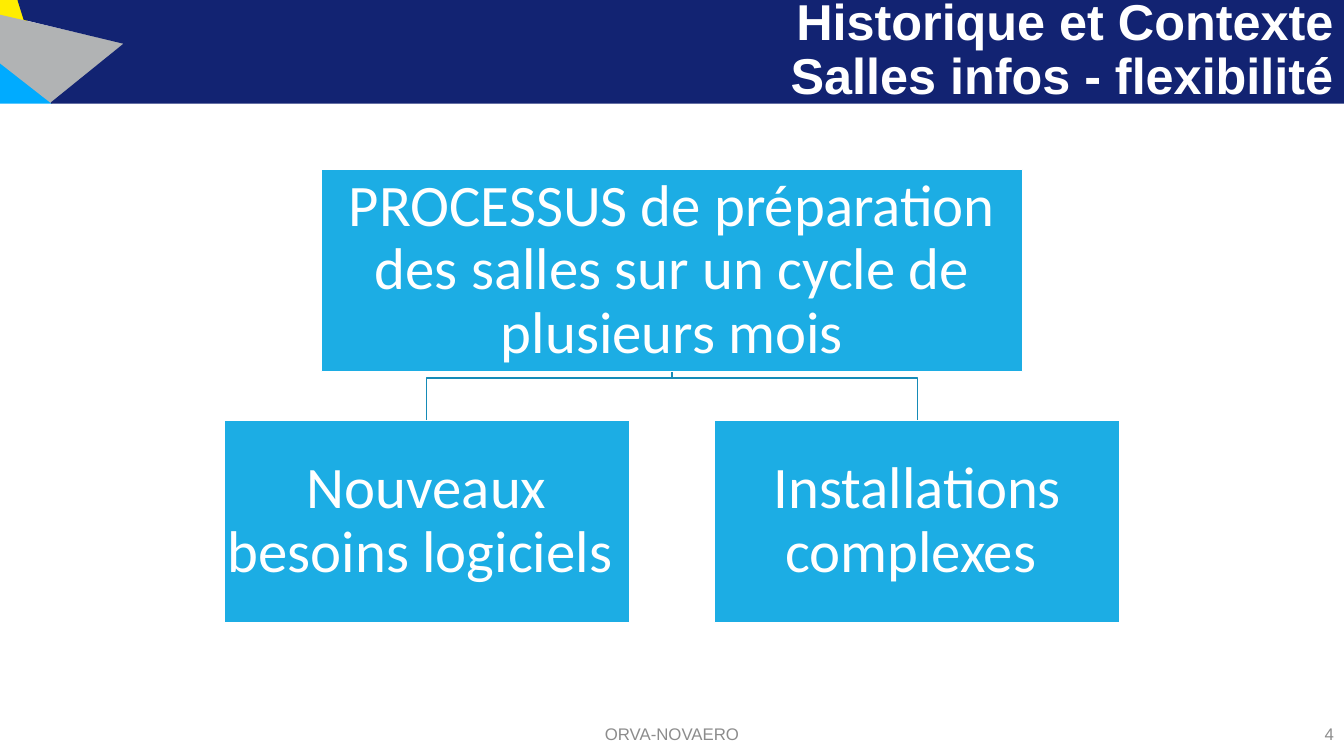
from pptx import Presentation
from pptx.dml.color import RGBColor
from pptx.enum.shapes import MSO_SHAPE as Shape
from pptx.enum.text import MSO_ANCHOR as Anchor, MSO_AUTO_SIZE as Fit, PP_ALIGN as Align
from pptx.util import Pt

HUES = {
    "navy": "122372", "yellow": "FFED00", "azure": "00ABFF", "silver": "B1B3B4",
    "box": "1CADE4", "link": "168BB7", "white": "FFFFFF", "grey": "8C8C8C",
}


def hue(name):
    return RGBColor.from_string(HUES[name])


def write(shape, text, size, color="white", font="Arial", align=Align.CENTER,
          bold=False, gap=1.0, inset=None):
    frame = shape.text_frame
    frame.word_wrap = True
    frame.auto_size = Fit.NONE
    frame.vertical_anchor = Anchor.MIDDLE
    if inset is not None:
        frame.margin_left = frame.margin_right = Pt(inset)
        frame.margin_top = frame.margin_bottom = Pt(inset)
    para = frame.paragraphs[0]
    para.alignment = align
    para.line_spacing = gap
    for i, line in enumerate(text.split("\n")):
        if i:
            para.add_line_break()
        run = para.add_run()
        run.text = line
        run.font.name = font
        run.font.size = Pt(size)
        run.font.bold = bold
        run.font.color.rgb = hue(color)


prs = Presentation()
prs.slide_width, prs.slide_height = Pt(960), Pt(540)
slide = prs.slides.add_slide(prs.slide_layouts[5])
shapes = slide.shapes
title = shapes.title

# Header band and its facets, then the links between boxes
top, high, low = 121, 144.5, 300.3
mid, step = 480, 175.2
outlines = [
    ("yellow", True, [(-0.7, 0), (0, 14.4), (20.2, 20.2), (15.8, 0)]),
    ("azure", True, [(0.5, 43), (0, 73.5), (36.7, 73.5)]),
    ("silver", True, [(0, 11), (0, 44.6), (37, 73.5), (88.5, 31.5)]),
    ("navy", True, [(36.7, 73.5), (89.3, 31), (17.3, 13.7), (13, 0),
                    (960, 0), (960, 73.5)]),
]
for x in (mid + step, mid - step):
    bend = top + high + 4.5
    outlines.append(("link", False, [(mid, top + high), (mid, bend), (x, bend), (x, low)]))

for color, solid, spots in outlines:
    spots = [(Pt(x), Pt(y)) for x, y in spots]
    pen = shapes.build_freeform(*spots[0], scale=1.0)
    pen.add_line_segments(spots[1:], close=solid)
    form = pen.convert_to_shape()
    form.shadow.inherit = False
    if solid:
        form.fill.solid()
        form.fill.fore_color.rgb = hue(color)
    else:
        form.fill.background()
    form.line.color.rgb = hue(color)
    form.line.width = Pt(1)

# Title, brought in front of the band
title.left, title.top, title.width, title.height = Pt(51.5), Pt(0), Pt(908.5), Pt(73.5)
shapes._spTree.append(title._element)
write(title, "Historique et Contexte\nSalles infos - flexibilité", 36,
      align=Align.RIGHT, bold=True, gap=0.9)

# Process boxes
boxes = [
    (mid, top, 501, "PROCESSUS de préparation des salles sur un cycle de plusieurs mois"),
    (mid - step, low, 289.5, "Nouveaux besoins logiciels "),
    (mid + step, low, 289.5, "Installations complexes "),
]
for x, y, wide, text in boxes:
    box = shapes.add_shape(Shape.RECTANGLE, Pt(x - wide / 2), Pt(y), Pt(wide), Pt(high))
    box.shadow.inherit = False
    box.fill.solid()
    box.fill.fore_color.rgb = hue("box")
    box.line.color.rgb = hue("white")
    box.line.width = Pt(1)
    write(box, text, 42, font="Calibri", gap=0.9, inset=2.1)

# Footer and page number
for x, wide, text, align in [(318, 324, "ORVA-NOVAERO", Align.CENTER),
                             (744, 216, "4", Align.RIGHT)]:
    foot = shapes.add_textbox(Pt(x), Pt(510), Pt(wide), Pt(28.8))
    write(foot, text, 12, color="grey", align=align)

prs.save("out.pptx")
